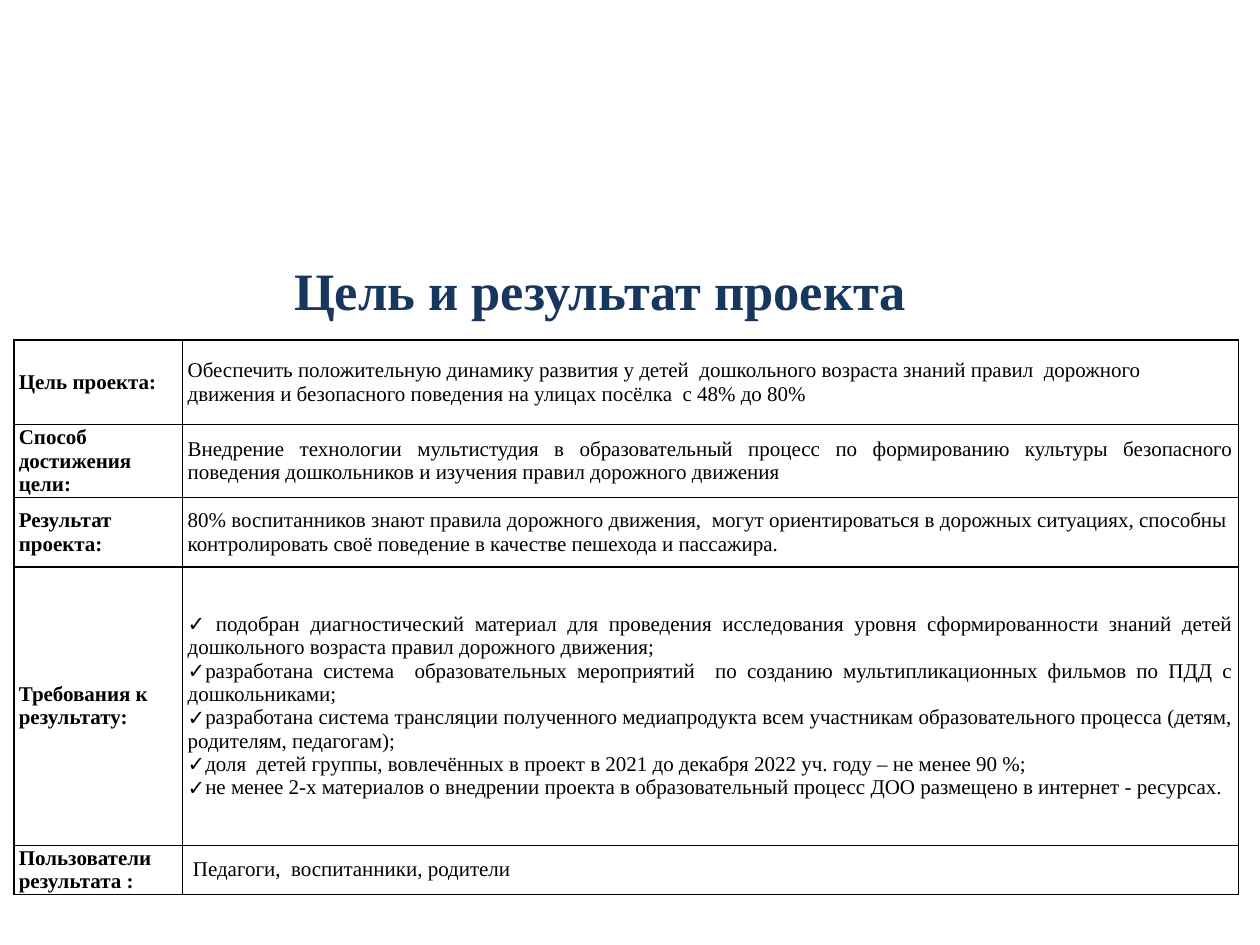
from dataclasses import dataclass

from lxml.etree import SubElement as Sub
from pptx import Presentation
from pptx.dml.color import RGBColor as Rgb
from pptx.enum.text import MSO_ANCHOR as Anchor, PP_ALIGN as Align
from pptx.oxml.ns import qn
from pptx.util import Inches, Pt


@dataclass(frozen=True)
class Theme:
    font: str = "Times New Roman"
    navy: str = "17375E"
    black: str = "000000"
    head: int = 30
    body: int = 12
    rule: int = 1


THEME = Theme()
COLS = (1.34, 8.38)
ROWS = (0.67, 0.58, 0.55, 2.21, 0.39)
# Label, lines of text, format of the text
GOALS = (
    ("Цель проекта:",
     ["Обеспечить положительную динамику развития у детей  дошкольного возраста "
      "знаний правил  дорожного движения и безопасного поведения на улицах "
      "посёлка  с 48% до 80%"], {}),
    ("Способ достижения цели:",
     ["Внедрение технологии мультистудия в образовательный процесс по "
      "формированию культуры безопасного поведения дошкольников и изучения "
      "правил дорожного движения"], {"align": Align.JUSTIFY}),
    ("Результат проекта:",
     ["80% воспитанников знают правила дорожного движения,  могут "
      "ориентироваться в дорожных ситуациях, способны  контролировать своё "
      "поведение в качестве пешехода и пассажира."], {"align": Align.JUSTIFY}),
    ("Требования к результату:",
     [" подобран диагностический материал для проведения исследования уровня "
      "сформированности знаний детей дошкольного возраста правил дорожного "
      "движения;",
      "разработана система  образовательных мероприятий  по созданию "
      "мультипликационных фильмов по ПДД с дошкольниками;",
      "разработана система трансляции полученного медиапродукта всем участникам "
      "образовательного процесса (детям, родителям, педагогам);",
      "доля  детей группы, вовлечённых в проект в 2021 до декабря 2022 уч. году "
      "– не менее 90 %;",
      "не менее 2-х материалов о внедрении проекта в образовательный процесс ДОО "
      "размещено в интернет - ресурсах."],
     {"align": Align.JUSTIFY, "bullet": "✓"}),
    ("Пользователи результата :", [" Педагоги,  воспитанники, родители"], {}),
)


def add_bullet(para, mark):
    props = para._p.get_or_add_pPr()
    props.set("marL", "0")
    props.set("indent", "0")
    Sub(props, qn("a:buFont"), typeface="Wingdings" if mark == "ü" else "Arial")
    Sub(props, qn("a:buChar"), char=mark)
    tabs = Sub(props, qn("a:tabLst"))
    Sub(tabs, qn("a:tab"), pos=str(Inches(0.5)), algn="l")


def write(frame, lines, size=THEME.body, color=THEME.black, bold=False,
          align=Align.LEFT, bullet=None):
    for i, line in enumerate(lines):
        para = frame.add_paragraph() if i else frame.paragraphs[0]
        para.alignment = align
        if bullet:
            add_bullet(para, bullet)
        run = para.add_run()
        run.text = line
        font = run.font
        font.name, font.size, font.bold = THEME.font, Pt(size), bold
        font.color.rgb = Rgb.from_string(color)


def set_rules(cell):
    props = cell._tc.get_or_add_tcPr()
    for side in ("lnL", "lnR", "lnT", "lnB"):
        line = Sub(props, qn(f"a:{side}"), w=str(Pt(THEME.rule)))
        fill = Sub(line, qn("a:solidFill"))
        Sub(fill, qn("a:srgbClr"), val=THEME.black)


def fill_cell(cell, lines, **style):
    cell.margin_left = cell.margin_right = Inches(0.04)
    cell.margin_top = cell.margin_bottom = 0
    cell.vertical_anchor = Anchor.MIDDLE
    set_rules(cell)
    cell.fill.background()
    write(cell.text_frame, lines, **style)


def add_title(slide, text):
    title = slide.shapes.title
    title.left, title.top = Inches(2.01), Inches(1.94)
    title.width, title.height = Inches(5.51), Inches(0.72)
    title.text_frame.vertical_anchor = Anchor.MIDDLE
    write(title.text_frame, [text], size=THEME.head, color=THEME.navy,
          bold=True, align=Align.CENTER)


def add_goals(slide):
    frame = slide.shapes.add_table(
        len(ROWS), len(COLS), Inches(0.11), Inches(2.7),
        Inches(sum(COLS)), Inches(sum(ROWS)))
    table = frame.table
    table.first_row = table.horz_banding = False
    for col, width in zip(table.columns, COLS):
        col.width = Inches(width)
    for row, height, (label, lines, style) in zip(table.rows, ROWS, GOALS):
        row.height = Inches(height)
        fill_cell(row.cells[0], [label], bold=True)
        fill_cell(row.cells[1], lines, **style)


def main():
    deck = Presentation()
    deck.slide_width, deck.slide_height = Inches(10), Inches(7.5)
    slide = deck.slides.add_slide(deck.slide_layouts[5])
    # Table of goals, then the heading above it
    add_goals(slide)
    add_title(slide, "Цель и результат проекта")
    deck.save("out.pptx")


if __name__ == "__main__":
    main()
